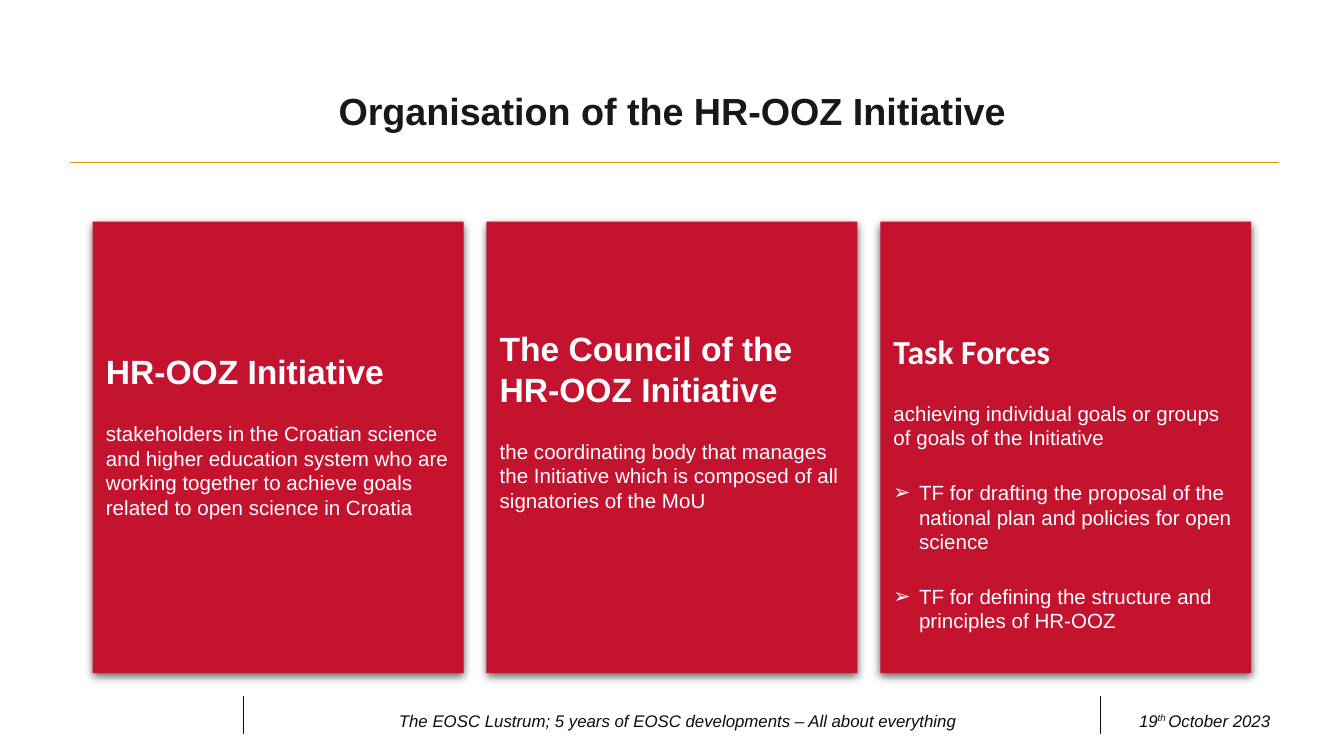
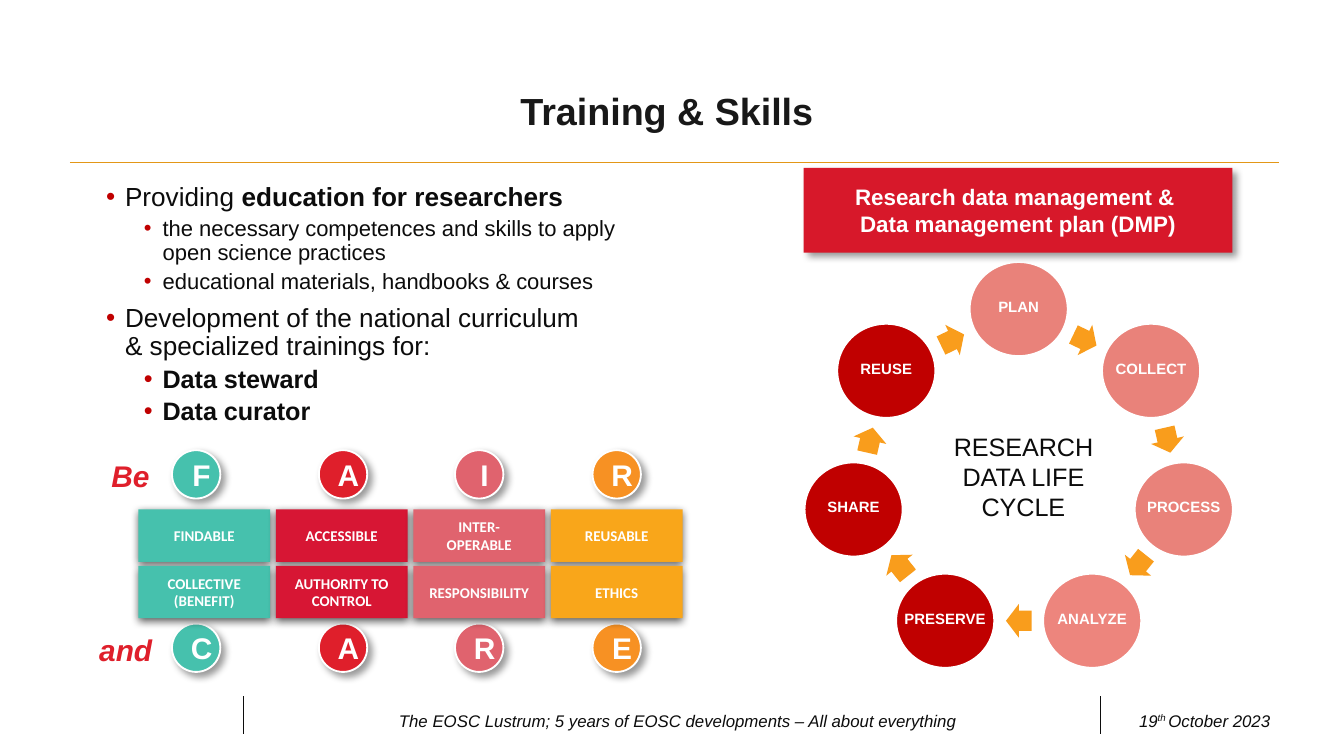
from math import cos, pi, sin

from pptx import Presentation
from pptx.dml.color import RGBColor
from pptx.enum.shapes import MSO_CONNECTOR, MSO_SHAPE
from pptx.enum.text import MSO_ANCHOR, MSO_AUTO_SIZE, PP_ALIGN
from pptx.oxml.ns import qn
from pptx.oxml.xmlchemy import OxmlElement
from pptx.util import Inches, Pt

WIDTH = 10
HEIGHT = WIDTH * 9 / 16
TITLE_ONLY, TITLE_AND_BODY = 5, 1
MARGIN = 0.69

WHITE = RGBColor(0xFF, 0xFF, 0xFF)
INK = RGBColor(0x0C, 0x0C, 0x0C)
TITLE_INK = RGBColor(0x18, 0x18, 0x18)
GOLD = RGBColor(0xE3, 0x97, 0x17)
CARD_RED = RGBColor(0xC3, 0x13, 0x2F)
BANNER_RED = RGBColor(0xD7, 0x18, 0x2A)
DARK_RED = RGBColor(0xC0, 0x00, 0x00)
LETTER_RED = RGBColor(0xDF, 0x1F, 0x2B)
BOX_RED = RGBColor(0xD7, 0x16, 0x34)
TEAL = RGBColor(0x46, 0xC1, 0xAD)
ROSE = RGBColor(0xE0, 0x63, 0x6E)
ORANGE = RGBColor(0xF7, 0x91, 0x23)
AMBER = RGBColor(0xF9, 0xA6, 0x1A)
ARROW_ORANGE = RGBColor(0xF9, 0x9D, 0x1C)
SALMON = RGBColor(0xE9, 0x82, 0x7A)
LIGHT_SALMON = RGBColor(0xED, 0x85, 0x7D)

# Shadows: opacity in percent, blur and distance in points, angle in degrees
SOFT_SHADOW = (63, 4.5, 1.5, 90)
CORNER_SHADOW = (40, 4, 3, 45)

FOOTER = "The EOSC Lustrum; 5 years of EOSC developments – All about everything"
DATE_DAY, DATE_SUFFIX, DATE_REST = "19", "th ", "October 2023 "

# heading, heading font, description, task list, top inset, bottom inset
CARDS = [
    ("HR-OOZ Initiative", "Arial",
     "stakeholders in the Croatian science and higher education system who are "
     "working together to achieve goals related to open science in Croatia",
     [], 0.05, 0.23),
    ("The Council of the HR-OOZ Initiative", "Arial",
     "the coordinating body that manages the Initiative which is composed of all "
     "signatories of the MoU",
     [], 0.05, 0.45),
    ("Task Forces", "Calibri",
     "achieving individual goals or groups of goals of the Initiative",
     ["TF for drafting the proposal of the national plan and policies for open science",
      "TF for defining the structure and principles of HR-OOZ"], 0.56, 0.05),
]

# level, size, runs of (text, bold)
TRAINING_POINTS = [
    (0, 14, [("Providing ", False), ("education for researchers", True)]),
    (1, 11.8, [("the necessary competences and skills to apply open science practices",
                False)]),
    (1, 11.8, [("educational materials, handbooks & courses", False)]),
    (0, 14, [("Development of the national curriculum \n& specialized trainings for:",
              False)]),
    (1, 13.5, [("Data steward", True)]),
    (1, 13.5, [("Data curator", True)]),
]

# letters, words, letter colour, box colour, offset of the letter in its column
FAIR_CARE = [
    ("FC", ("FINDABLE", "COLLECTIVE (BENEFIT)"), TEAL, TEAL, 0.25),
    ("AA", ("ACCESSIBLE", "AUTHORITY TO CONTROL"), LETTER_RED, BOX_RED, 0.32),
    ("IR", ("INTER-OPERABLE", "RESPONSIBILITY"), ROSE, ROSE, 0.31),
    ("RE", ("REUSABLE", "ETHICS"), ORANGE, AMBER, 0.31),
]
CALLS = [("Be", 0.73, 3.36, 0.49), ("and", 0.64, 4.65, 0.6)]

BANNER = ["Research data management & ", "Data management plan (DMP)"]
CYCLE_NAME = ["RESEARCH", "DATA LIFE", "CYCLE"]
CYCLE = [("PLAN", SALMON), ("COLLECT", SALMON), ("PROCESS", SALMON),
         ("ANALYZE", LIGHT_SALMON), ("PRESERVE", DARK_RED), ("SHARE", DARK_RED),
         ("REUSE", DARK_RED)]


def inches(*lengths):
    return [Inches(length) for length in lengths]


def add_run(paragraph, text, size, color, bold=False, italic=False, font="Arial"):
    """Add text as one run a line and return the last run."""
    for index, line in enumerate(text.split("\n")):
        if index:
            paragraph.add_line_break()
        run = paragraph.add_run()
        run.text = line
        run.font.name, run.font.size = font, Pt(size)
        run.font.bold, run.font.italic = bold, italic
        run.font.color.rgb = color
    return run


def next_paragraph(frame):
    """Return the empty first paragraph, or a new one after the text."""
    first = frame.paragraphs[0]
    return frame.add_paragraph() if first.runs else first


def add_lines(frame, lines, size, color, align=PP_ALIGN.CENTER, **style):
    for line in lines:
        paragraph = next_paragraph(frame)
        paragraph.alignment = align
        add_run(paragraph, line, size, color, **style)


def set_bullet(paragraph, character, left, hanging, color=None):
    properties = paragraph._p.get_or_add_pPr()
    properties.set("marL", str(Inches(left)))
    properties.set("indent", str(-Inches(hanging)))
    if color is not None:
        bullet_color = OxmlElement("a:buClr")
        rgb = OxmlElement("a:srgbClr")
        rgb.set("val", str(color))
        bullet_color.append(rgb)
        properties.append(bullet_color)
    for tag, name, value in (("a:buFont", "typeface", "Arial"),
                             ("a:buChar", "char", character)):
        element = OxmlElement(tag)
        element.set(name, value)
        properties.append(element)


def set_insets(frame, left, top, right, bottom):
    frame.margin_left, frame.margin_top = inches(left, top)
    frame.margin_right, frame.margin_bottom = inches(right, bottom)


def add_shadow(shape, opacity, blur, distance, angle):
    shadow = OxmlElement("a:outerShdw")
    for name, value in (("blurRad", Pt(blur)), ("dist", Pt(distance)),
                        ("dir", angle * 60000), ("algn", "t"), ("rotWithShape", 0)):
        shadow.set(name, str(value))
    color, alpha = OxmlElement("a:srgbClr"), OxmlElement("a:alpha")
    color.set("val", "000000")
    alpha.set("val", str(opacity * 1000))
    color.append(alpha)
    shadow.append(color)
    shape._element.spPr.find(qn("a:effectLst")).append(shadow)


def add_block(slide, kind, left, top, width, height, fill, outline=None, shadow=None):
    shape = slide.shapes.add_shape(kind, *inches(left, top, width, height))
    shape.fill.solid()
    shape.fill.fore_color.rgb = fill
    if outline is None:
        shape.line.fill.background()
    else:
        shape.line.color.rgb, shape.line.width = outline, Pt(1)
    shape.shadow.inherit = False
    if shadow:
        add_shadow(shape, *shadow)
    shape.text_frame.word_wrap = True
    shape.text_frame.vertical_anchor = MSO_ANCHOR.MIDDLE
    return shape


def add_text_box(slide, left, top, width, height, wrap=True):
    frame = slide.shapes.add_textbox(*inches(left, top, width, height)).text_frame
    frame.word_wrap = wrap
    frame.vertical_anchor = MSO_ANCHOR.MIDDLE if wrap else MSO_ANCHOR.TOP
    return frame


def add_rule(slide, x1, y1, x2, y2, color):
    rule = slide.shapes.add_connector(MSO_CONNECTOR.STRAIGHT, *inches(x1, y1, x2, y2))
    rule.line.color.rgb, rule.line.width = color, Pt(0.5)
    rule._element.spPr.append(OxmlElement("a:effectLst"))


def place(placeholder, left, top, width, height):
    placeholder.left, placeholder.top = inches(left, top)
    placeholder.width, placeholder.height = inches(width, height)
    frame = placeholder.text_frame
    frame.word_wrap, frame.auto_size = True, MSO_AUTO_SIZE.NONE
    return frame


def add_slide(presentation, layout, title):
    """Add a slide with its title, rules, footer and date."""
    slide = presentation.slides.add_slide(presentation.slide_layouts[layout])
    frame = place(slide.shapes.title, MARGIN, 0.3, WIDTH - 2 * MARGIN, 1.09)
    frame.vertical_anchor = MSO_ANCHOR.MIDDLE
    add_lines(frame, [title], 20.2, TITLE_INK, bold=True)
    frame.paragraphs[0].line_spacing = 0.9

    add_rule(slide, 0.52, 1.21, 9.52, 1.21, GOLD)
    for x in (1.81, WIDTH - 1.81):
        add_rule(slide, x, 5.18, x, 5.46, INK)
    add_lines(add_text_box(slide, 2.24, 5.21, 5.6, 0.3), [FOOTER], 9, INK, italic=True)
    date = add_text_box(slide, 8.27, 5.21, 1.42, 0.3).paragraphs[0]
    date.alignment = PP_ALIGN.CENTER
    add_run(date, DATE_DAY, 9, INK, italic=True)
    suffix = add_run(date, DATE_SUFFIX, 9, INK, italic=True)
    suffix._r.get_or_add_rPr().set("baseline", "30000")
    add_run(date, DATE_REST, 9, INK, italic=True)
    return slide


def add_cards(slide):
    width, height, top = 2.76, 3.36, 1.65
    step = (WIDTH - 2 * MARGIN - width) / (len(CARDS) - 1)
    for column, (heading, font, text, tasks, above, below) in enumerate(CARDS):
        card = add_block(slide, MSO_SHAPE.RECTANGLE, MARGIN + column * step, top,
                         width, height, CARD_RED, shadow=SOFT_SHADOW)
        frame = card.text_frame
        set_insets(frame, 0.1, above, 0.1, below)
        add_lines(frame, [heading], 18, WHITE, PP_ALIGN.LEFT, bold=True, font=font)
        add_lines(frame, [text, *tasks], 11, WHITE, PP_ALIGN.LEFT)
        for paragraph in frame.paragraphs:
            paragraph.space_after = Pt(16)
        for paragraph in frame.paragraphs[2:]:
            set_bullet(paragraph, "➢", 0.19, 0.19)


def add_training_points(slide):
    frame = place(slide.placeholders[1], MARGIN, 1.32, 4.23, 3.02)
    for index, (level, size, runs) in enumerate(TRAINING_POINTS):
        paragraph = next_paragraph(frame)
        paragraph.level = level
        paragraph.line_spacing = 0.9
        paragraph.space_before = Pt((2.8 if level else 5.6) if index else 0)
        set_bullet(paragraph, "•", 0.14 + 0.28 * level, 0.14, DARK_RED)
        for text, bold in runs:
            add_run(paragraph, text, size, INK, bold)


def add_fair_care(slide):
    left, step, letter_size = 1.03, 1.023, 0.36
    letter_tops, box_tops = (3.35, 4.64), (3.79, 4.21)
    for column, (letters, words, letter_color, box_color, offset) in enumerate(FAIR_CARE):
        x = left + column * step
        for letter, word, letter_top, box_top in zip(letters, words, letter_tops, box_tops):
            circle = add_block(slide, MSO_SHAPE.OVAL, x + offset, letter_top, letter_size,
                               letter_size, letter_color, WHITE, CORNER_SHADOW)
            circle.text_frame.word_wrap = False
            set_insets(circle.text_frame, 0.08, 0, 0, 0)
            add_lines(circle.text_frame, [letter], 16, WHITE, bold=True)
            box = add_block(slide, MSO_SHAPE.RECTANGLE, x, box_top, 0.98, 0.39,
                            box_color, shadow=SOFT_SHADOW)
            add_lines(box.text_frame, [word], 8, WHITE, bold=True, font="Calibri")
    for word, x, y, width in CALLS:
        add_lines(add_text_box(slide, x, y, width, 0.37, wrap=False), [word], 16,
                  LETTER_RED, PP_ALIGN.LEFT, bold=True, italic=True)


def add_cycle(slide):
    """Set the steps on a ring, with an arrow halfway to each next step."""
    center_x, center_y, radius_x, radius_y = 7.58, 3.52, 1.26, 1.22
    width, height, arrow_width, arrow_height = 0.73, 0.7, 0.19, 0.25
    count = len(CYCLE)
    turns = [2 * pi * index / count for index in range(count)]
    centers = [(center_x + radius_x * sin(turn), center_y - radius_y * cos(turn))
               for turn in turns]
    for index, (name, color) in enumerate(CYCLE):
        x, y = centers[index]
        circle = add_block(slide, MSO_SHAPE.OVAL, x - width / 2, y - height / 2,
                           width, height, color, WHITE)
        circle.text_frame.word_wrap = False
        set_insets(circle.text_frame, 0, 0, 0, 0.02)
        add_lines(circle.text_frame, [name], 8, WHITE, bold=True)
        circle.text_frame.paragraphs[0].line_spacing = 0.9

        next_x, next_y = centers[(index + 1) % count]
        arrow = add_block(slide, MSO_SHAPE.RIGHT_ARROW, (x + next_x - arrow_width) / 2,
                          (y + next_y - arrow_height) / 2, arrow_width, arrow_height,
                          ARROW_ORANGE)
        arrow.adjustments[0], arrow.adjustments[1] = 0.6, 0.5
        arrow.rotation = 360 * (index + 0.5) / count
    arrow_tail = add_block(slide, MSO_SHAPE.RECTANGLE, 6.65, 4.16, 0.13, 0.15, ARROW_ORANGE)
    arrow_tail.rotation = 360 / count
    add_lines(add_text_box(slide, 6.99, 3.16, 1.25, 0.78, wrap=False), CYCLE_NAME,
              13.5, INK)


def main():
    presentation = Presentation()
    presentation.slide_width, presentation.slide_height = inches(WIDTH, HEIGHT)

    add_cards(add_slide(presentation, TITLE_ONLY, "Organisation of the HR-OOZ Initiative"))

    training = add_slide(presentation, TITLE_AND_BODY, "Training & Skills ")
    add_training_points(training)
    add_fair_care(training)
    add_cycle(training)
    banner = add_block(training, MSO_SHAPE.RECTANGLE, 5.98, 1.25, 3.19, 0.63,
                       BANNER_RED, shadow=CORNER_SHADOW)
    add_lines(banner.text_frame, BANNER, 12, WHITE, bold=True)

    presentation.save("out.pptx")


if __name__ == "__main__":
    main()
